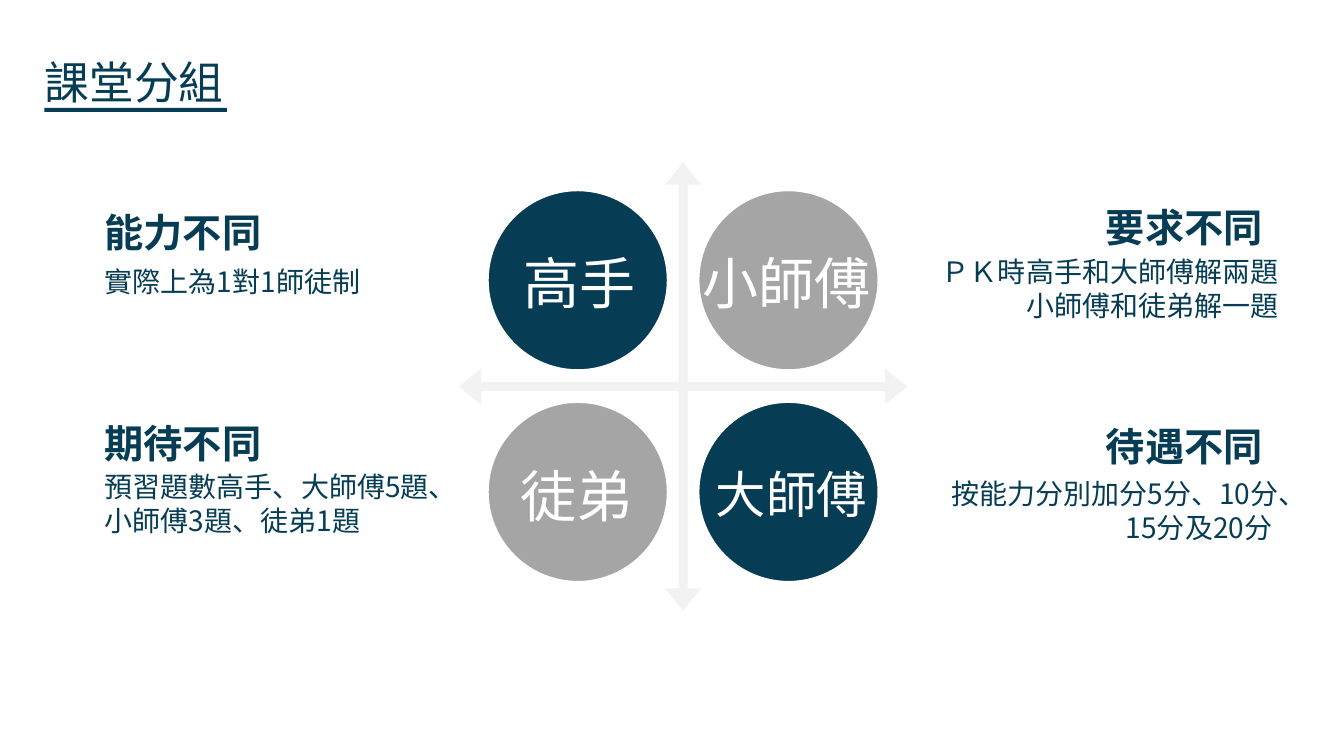
from dataclasses import dataclass

from lxml.etree import SubElement
from pptx import Presentation
from pptx.dml.color import RGBColor
from pptx.enum.shapes import MSO_SHAPE as Preset
from pptx.enum.text import MSO_ANCHOR as Anchor, MSO_AUTO_SIZE as AutoSize, PP_ALIGN as Align
from pptx.oxml.ns import qn
from pptx.util import Pt


@dataclass(frozen=True)
class Theme:
    font: str = "Noto Sans CJK TC"
    navy: str = "063D54"
    gray: str = "A5A5A5"
    pale: str = "F2F2F2"
    white: str = "FFFFFF"
    title: int = 32
    heading: int = 28
    detail: int = 20
    role: int = 40
    long_role: int = 36


class Board:
    SCALE = 9144  # EMU per px, 100 px to the inch

    def __init__(self, deck, theme):
        self.theme = theme
        self.slide = deck.slides.add_slide(deck.slide_layouts[5])

    def emu(self, *lengths):
        return [length * self.SCALE for length in lengths]

    def fill_lines(self, frame, lines, size, color, align, bold=False, spacing=None):
        for number, line in enumerate(lines):
            paragraph = frame.add_paragraph() if number else frame.paragraphs[0]
            paragraph.alignment = align
            if spacing:
                paragraph.line_spacing = spacing
            run = paragraph.add_run()
            run.text = line
            font = run.font
            font.size, font.bold, font.name = Pt(size), bold, self.theme.font
            font.color.rgb = RGBColor.from_string(color)
            east_asian = SubElement(font._element, qn("a:ea"))
            east_asian.set("typeface", self.theme.font)

    def title(self, box, wording):
        heading = self.slide.shapes.title
        heading.left, heading.top, heading.width, heading.height = self.emu(*box)
        frame = heading.text_frame
        frame.margin_left = frame.margin_right = frame.margin_top = 0
        frame.vertical_anchor = Anchor.TOP
        frame.word_wrap = True
        frame.auto_size = AutoSize.NONE
        self.fill_lines(frame, [wording], self.theme.title, self.theme.navy, Align.LEFT,
                        spacing=1.2)

    def text(self, box, lines, size, color, align, bold=False, anchor=Anchor.TOP):
        frame = self.slide.shapes.add_textbox(*self.emu(*box)).text_frame
        frame.word_wrap = True
        frame.auto_size = AutoSize.SHAPE_TO_FIT_TEXT
        frame.vertical_anchor = anchor
        self.fill_lines(frame, lines, size, color, align, bold)

    def shape(self, preset, box, fill, outline=None, adjustments=()):
        figure = self.slide.shapes.add_shape(preset, *self.emu(*box))
        figure.shadow.inherit = False
        figure.fill.solid()
        figure.fill.fore_color.rgb = RGBColor.from_string(fill)
        if outline:
            figure.line.color.rgb = RGBColor.from_string(outline)
            figure.line.width = Pt(1)
        else:
            figure.line.fill.background()
        for index, value in enumerate(adjustments):
            figure.adjustments[index] = value


def main():
    deck = Presentation()
    deck.slide_width, deck.slide_height = 1333 * Board.SCALE, 750 * Board.SCALE
    theme = Theme()
    board = Board(deck, theme)

    # Title with its rule
    board.title((44, 44, 377, 65), "課堂分組")
    board.shape(Preset.RECTANGLE, (44, 107, 181, 4), theme.navy)

    # Differences: heading place, detail place, alignment
    differences = [
        ("能力不同", (94, 202), ["實際上為1對1師徒制"], (94, 257, 353, 44), Align.LEFT),
        ("期待不同", (94, 411), ["預習題數高手、大師傅5題、", "小師傅3題、徒弟1題"],
         (94, 461, 353, 77), Align.LEFT),
        ("要求不同", (981, 197), ["ＰＫ時高手和大師傅解兩題", "小師傅和徒弟解一題"],
         (906, 248, 372, 77), Align.RIGHT),
        ("待遇不同", (981, 414), ["按能力分別加分5分、10分、", "15分及20分 "],
         (925, 468, 353, 77), Align.RIGHT),
    ]
    for heading, place, details, detail_box, align in differences:
        board.text((*place, 281, 57), [heading], theme.heading, theme.navy, align, bold=True)
        board.text(detail_box, details, theme.detail, theme.navy, align)

    # Four-way arrow behind the roles
    board.shape(Preset.QUAD_ARROW, (455, 161, 445, 445), theme.pale,
                adjustments=(0.02, 0.04, 0.05))

    # Roles: a two by two grid of circles with labels
    roles = [
        ("高手", (507, 241, 135, 77), theme.role),
        ("小師傅", (684, 241, 192, 77), theme.role),
        ("徒弟", (504, 453, 135, 77), theme.role),
        ("大師傅", (698, 454, 174, 71), theme.long_role),
    ]
    for index, (role, label_box, size) in enumerate(roles):
        row, column = divmod(index, 2)
        fill = theme.navy if row == column else theme.gray
        board.shape(Preset.OVAL, (484 + 209 * column, 189 + 210 * row, 178, 178),
                    fill, outline=theme.white)
        board.text(label_box, [role], size, theme.white, Align.CENTER, anchor=Anchor.MIDDLE)

    deck.save("out.pptx")


if __name__ == "__main__":
    main()
